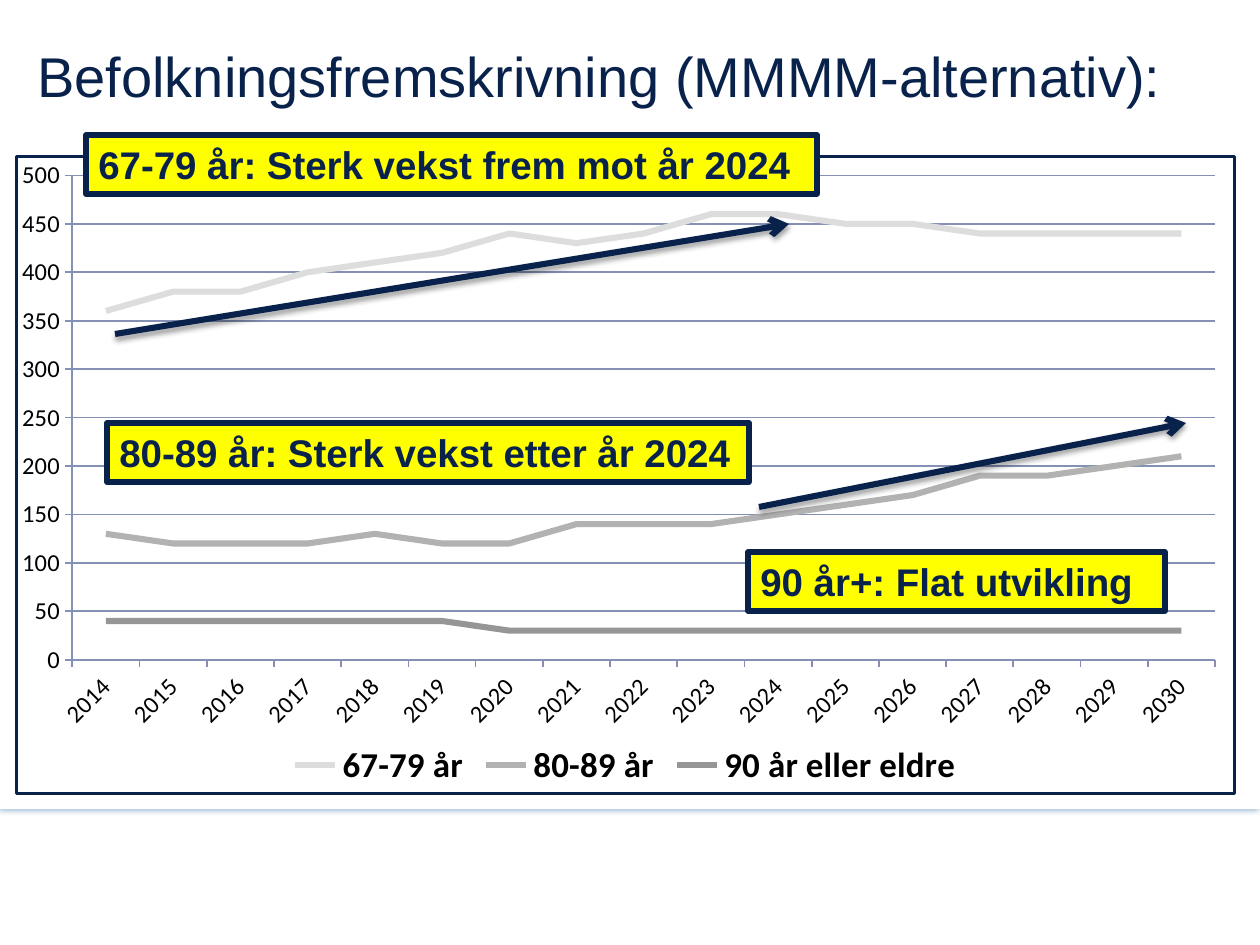
from lxml import etree
from pptx import Presentation
from pptx.chart.data import CategoryChartData
from pptx.dml.color import RGBColor
from pptx.enum.chart import XL_CHART_TYPE, XL_LEGEND_POSITION, XL_MARKER_STYLE, XL_TICK_MARK
from pptx.enum.shapes import MSO_CONNECTOR, MSO_SHAPE
from pptx.enum.text import MSO_ANCHOR, PP_ALIGN
from pptx.oxml.ns import qn
from pptx.util import Emu, Pt

LINE_CHART = XL_CHART_TYPE.LINE
LEGEND_BOTTOM = XL_LEGEND_POSITION.BOTTOM
NO_MARKER = XL_MARKER_STYLE.NONE
TICK_OUT, TICK_NONE = XL_TICK_MARK.OUTSIDE, XL_TICK_MARK.NONE
STRAIGHT, RECTANGLE = MSO_CONNECTOR.STRAIGHT, MSO_SHAPE.RECTANGLE
MIDDLE, LEFT = MSO_ANCHOR.MIDDLE, PP_ALIGN.LEFT

EMU_PER_PX = 914400 / 126
COLORS = {
    "white": "FFFFFF", "black": "000000", "navy": "09224B", "yellow": "FFFF00",
    "grid": "8490B4", "panel_shadow": "005193",
}
PLOT_LAYOUT = {"x": 0.046, "y": 0.03, "w": 0.938, "h": 0.76}
YEARS = [str(year) for year in range(2014, 2031)]
SERIES = [
    ("67-79 år", "DDDDDD",
     [360, 380, 380, 400, 410, 420, 440, 430, 440, 460, 460, 450, 450, 440, 440, 440, 440]),
    ("80-89 år", "B2B2B2",
     [130, 120, 120, 120, 130, 120, 120, 140, 140, 140, 150, 160, 170, 190, 190, 200, 210]),
    ("90 år eller eldre", "969696",
     [40, 40, 40, 40, 40, 40, 30, 30, 30, 30, 30, 30, 30, 30, 30, 30, 30]),
]
CALLOUTS = [
    ("67-79 år: Sterk vekst frem mot år 2024", (86, 135, 731, 59)),
    ("80-89 år: Sterk vekst etter år 2024", (107, 423, 642, 59)),
    ("90 år+: Flat utvikling", (748, 552, 417, 59)),
]
TREND_ARROWS = [(115, 334, 789, 224), (759, 507, 1186, 423)]


def px(*lengths):
    return [Emu(round(length * EMU_PER_PX)) for length in lengths]


def color(name):
    return RGBColor.from_string(COLORS[name])


def style_line(line, rgb, width):
    line.color.rgb = rgb
    line.width = Pt(width)


def style_font(font, name, size, rgb, bold=False):
    font.name, font.size, font.bold = name, Pt(size), bold
    font.color.rgb = rgb


def add_shadow(shape, color_name, opacity, blur, distance):
    """Give the shape a soft shadow that falls straight down."""
    properties = shape._element.spPr
    effects = properties.find(qn("a:effectLst"))
    if effects is None:
        effects = etree.SubElement(properties, qn("a:effectLst"))
    shadow = etree.SubElement(effects, qn("a:outerShdw"), blurRad=str(Pt(blur)),
                              dist=str(Pt(distance)), dir="5400000", rotWithShape="0")
    tint = etree.SubElement(shadow, qn("a:srgbClr"), val=COLORS[color_name])
    etree.SubElement(tint, qn("a:alpha"), val=str(opacity * 1000))


def add_rectangle(slide, area, fill):
    shape = slide.shapes.add_shape(RECTANGLE, *px(*area))
    shape.shadow.inherit = False
    shape.fill.solid()
    shape.fill.fore_color.rgb = color(fill)
    shape.line.fill.background()
    return shape


def write_text(box, text, size, bold=False):
    frame = box.text_frame
    frame.word_wrap = True
    frame.vertical_anchor = MIDDLE
    para = frame.paragraphs[0]
    para.alignment = LEFT
    span = para.add_run()
    span.text = text
    style_font(span.font, "Arial", size, color("navy"), bold)


def add_callout(slide, text, area):
    box = add_rectangle(slide, area, "yellow")
    style_line(box.line, color("navy"), 3)
    write_text(box, text, 22, bold=True)


def add_trend_arrow(slide, ends):
    arrow = slide.shapes.add_connector(STRAIGHT, *px(*ends))
    style_line(arrow.line, color("navy"), 3.5)
    etree.SubElement(arrow._element.spPr.find(qn("a:ln")), qn("a:tailEnd"), type="arrow")
    add_shadow(arrow, "black", 38, 3.1, 1.6)


def place_plot(chart):
    """Fix the inner plot area as fractions of the chart."""
    plot_area = chart._chartSpace.chart.plotArea
    for old in plot_area.findall(qn("c:layout")):
        plot_area.remove(old)
    layout = etree.Element(qn("c:layout"))
    plot_area.insert(0, layout)
    manual = etree.SubElement(layout, qn("c:manualLayout"))
    settings = {"layoutTarget": "inner", "xMode": "edge", "yMode": "edge", **PLOT_LAYOUT}
    for tag, value in settings.items():
        etree.SubElement(manual, qn(f"c:{tag}"), val=str(value))


def frame_chart(chart):
    properties = etree.Element(qn("c:spPr"))
    chart._chartSpace.chart.addnext(properties)
    etree.SubElement(properties, qn("a:noFill"))
    border = etree.SubElement(properties, qn("a:ln"), w=str(Pt(1.5)))
    fill = etree.SubElement(border, qn("a:solidFill"))
    etree.SubElement(fill, qn("a:srgbClr"), val=COLORS["navy"])


def style_axes(chart):
    values, years = chart.value_axis, chart.category_axis
    values.minimum_scale, values.maximum_scale, values.major_unit = 0, 500, 50
    values.has_major_gridlines = True
    style_line(values.major_gridlines.format.line, color("grid"), 1)
    for axis in (values, years):
        axis.major_tick_mark, axis.minor_tick_mark = TICK_OUT, TICK_NONE
        style_line(axis.format.line, color("grid"), 1)
        style_font(axis.tick_labels.font, "Calibri", 14, color("black"))
    years._element.find(qn("c:txPr")).find(qn("a:bodyPr")).set("rot", "-2700000")


def add_population_chart(slide, area):
    data = CategoryChartData()
    data.categories = YEARS
    for name, _, values in SERIES:
        data.add_series(name, values)
    chart = slide.shapes.add_chart(LINE_CHART, *px(*area), data).chart
    style_font(chart.font, "Calibri", 10, color("black"))
    chart.has_title = False
    chart.has_legend = True
    chart.legend.position = LEGEND_BOTTOM
    chart.legend.include_in_layout = False
    style_font(chart.legend.font, "Calibri", 20, color("black"), bold=True)
    plot = chart.plots[0]
    plot.vary_by_categories = False
    for series, (_, shade, _) in zip(plot.series, SERIES):
        series.smooth = False
        series.marker.style = NO_MARKER
        style_line(series.format.line, RGBColor.from_string(shade), 3.5)
    style_axes(chart)
    place_plot(chart)
    frame_chart(chart)


def main():
    deck = Presentation()
    deck.slide_width, deck.slide_height = px(1260, 945)
    slide = deck.slides.add_slide(deck.slide_layouts[6])
    panel = add_rectangle(slide, (0, 0, 1260, 809), "white")
    add_shadow(panel, "panel_shadow", 35, 3.1, 1.8)
    title = slide.shapes.add_textbox(*px(25, 16, 1221, 118))
    write_text(title, "Befolkningsfremskrivning (MMMM-alternativ):", 32)
    add_population_chart(slide, (15, 155, 1221, 640))
    for text, area in CALLOUTS:
        add_callout(slide, text, area)
    for ends in TREND_ARROWS:
        add_trend_arrow(slide, ends)
    deck.save("out.pptx")


if __name__ == "__main__":
    main()
